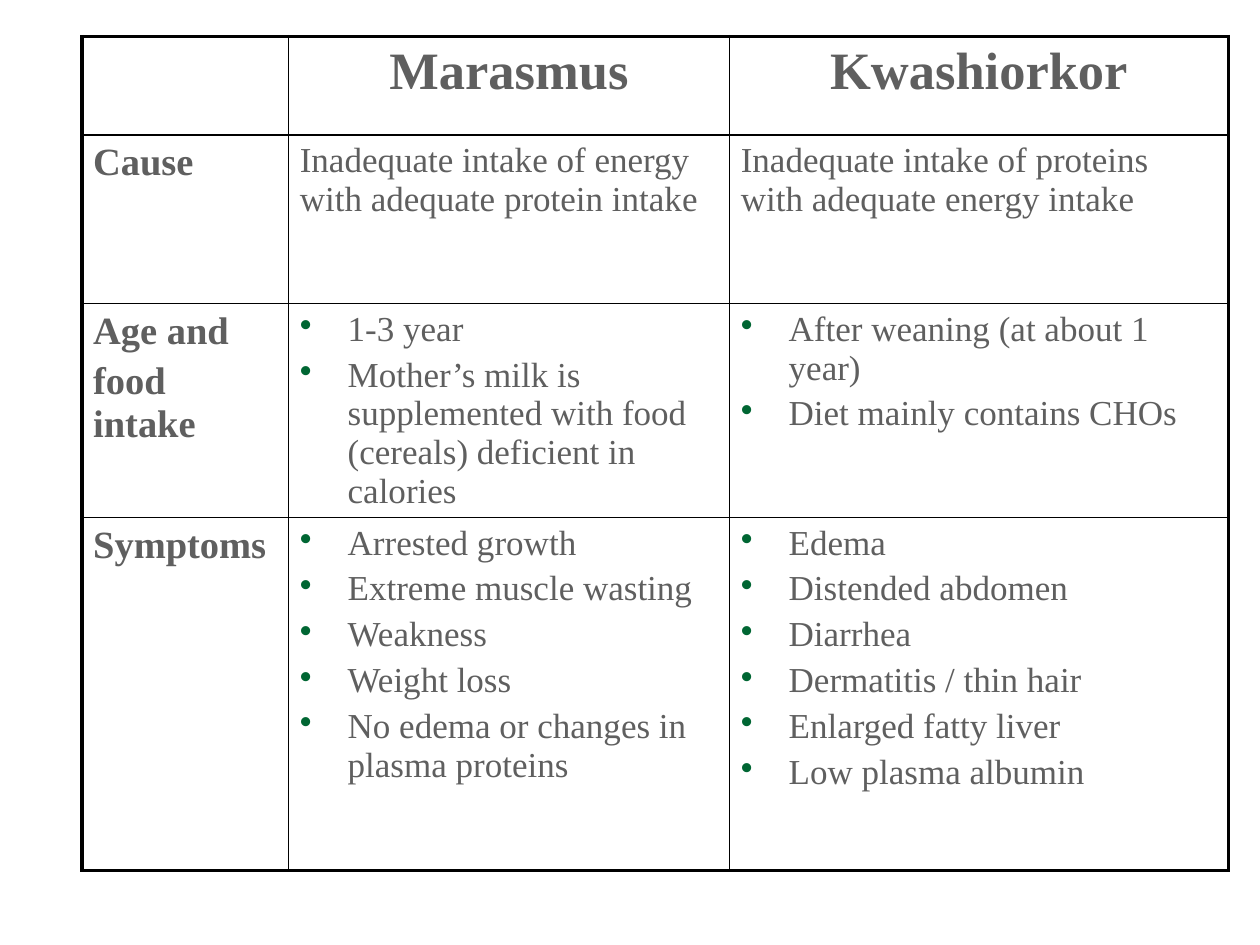
from dataclasses import dataclass

from lxml import etree
from pptx import Presentation
from pptx.dml.color import RGBColor
from pptx.enum.text import PP_ALIGN
from pptx.oxml.ns import qn
from pptx.table import _Cell
from pptx.text.text import _Paragraph
from pptx.util import Inches, Pt

CENTER, LEFT = PP_ALIGN.CENTER, PP_ALIGN.LEFT
GRAY = RGBColor(0x5F, 0x5F, 0x5F)
GREEN = RGBColor(0x00, 0x66, 0x33)
BLACK = RGBColor(0x00, 0x00, 0x00)
WHITE = RGBColor(0xFF, 0xFF, 0xFF)
FONT = "Times New Roman"
THIN, THICK = Pt(1), Pt(2.25)
INDENT = Inches(0.38)
WIDTHS = (1.64, 3.5, 3.96)


@dataclass(frozen=True)
class Row:
    height: float
    label: list[str]
    cells: tuple[list[str], list[str]]
    bullet: bool = False


HEADS = ("Marasmus", "Kwashiorkor")
ROWS = (
    Row(1.34, ["Cause"], (
        ["Inadequate intake of energy with adequate protein intake"],
        ["Inadequate intake of proteins with adequate energy intake"])),
    Row(1.54, ["Age and", "food intake"], (
        ["1-3 year",
         "Mother’s milk is supplemented with food (cereals) deficient in calories"],
        ["After weaning (at about 1 year)", "Diet mainly contains CHOs"]),
        bullet=True),
    Row(2.8, ["Symptoms"], (
        ["Arrested growth", "Extreme muscle wasting", "Weakness", "Weight loss",
         "No edema or changes in plasma proteins"],
        ["Edema", "Distended abdomen", "Diarrhea", "Dermatitis / thin hair",
         "Enlarged fatty liver", "Low plasma albumin"]),
        bullet=True),
)


def add_color(parent: etree._Element, color: RGBColor) -> None:
    etree.SubElement(parent, qn("a:srgbClr"), val=str(color))


def add_bullet(para: _Paragraph) -> None:
    props = para._p.get_or_add_pPr()
    props.set("marL", str(INDENT))
    props.set("indent", str(-INDENT))
    add_color(etree.SubElement(props, qn("a:buClr")), GREEN)
    etree.SubElement(props, qn("a:buChar"), char="•")


def write(cell: _Cell, lines: list[str], size: int = 20, bold: bool = False,
          align: PP_ALIGN = LEFT, bullet: bool = False) -> None:
    frame = cell.text_frame
    for i, line in enumerate(lines):
        para = frame.add_paragraph() if i else frame.paragraphs[0]
        if bullet:
            add_bullet(para)
        para.alignment = align
        para.space_before = Pt(0.2 * size if i else 0)
        run = para.add_run()
        run.text = line
        font = run.font
        font.name, font.size, font.bold = FONT, Pt(size), bold
        font.color.rgb = GRAY


def style(cell: _Cell, row: int, col: int) -> None:
    """Set margins, borders (thick on the table's outer edge) and fill."""
    cell.margin_left = cell.margin_right = Inches(0.09)
    cell.margin_top = cell.margin_bottom = Inches(0.05)
    props = cell._tc.get_or_add_tcPr()
    edges = {"a:lnL": col == 0, "a:lnR": col == len(WIDTHS) - 1,
             "a:lnT": row == 0, "a:lnB": row == len(ROWS)}
    for tag, outer in edges.items():
        line = etree.SubElement(props, qn(tag), w=str(THICK if outer else THIN))
        add_color(etree.SubElement(line, qn("a:solidFill")), BLACK)
    cell.fill.solid()
    cell.fill.fore_color.rgb = WHITE


def main() -> None:
    deck = Presentation()
    deck.slide_width, deck.slide_height = Inches(10), Inches(7.5)
    slide = deck.slides.add_slide(deck.slide_layouts[6])
    heights = [0.78] + [row.height for row in ROWS]
    table = slide.shapes.add_table(
        len(heights), len(WIDTHS), Inches(0.65), Inches(0.29),
        Inches(sum(WIDTHS)), Inches(sum(heights))).table
    table.first_row = table.horz_banding = False

    for col, width in enumerate(WIDTHS):
        table.columns[col].width = Inches(width)
    for r, height in enumerate(heights):
        table.rows[r].height = Inches(height)
        for c in range(len(WIDTHS)):
            style(table.cell(r, c), r, c)

    for c, head in enumerate(HEADS, 1):
        write(table.cell(0, c), [head], size=30, bold=True, align=CENTER)
    for r, row in enumerate(ROWS, 1):
        write(table.cell(r, 0), row.label, size=22, bold=True)
        for c, lines in enumerate(row.cells, 1):
            write(table.cell(r, c), lines, bullet=row.bullet)

    deck.save("out.pptx")


if __name__ == "__main__":
    main()
